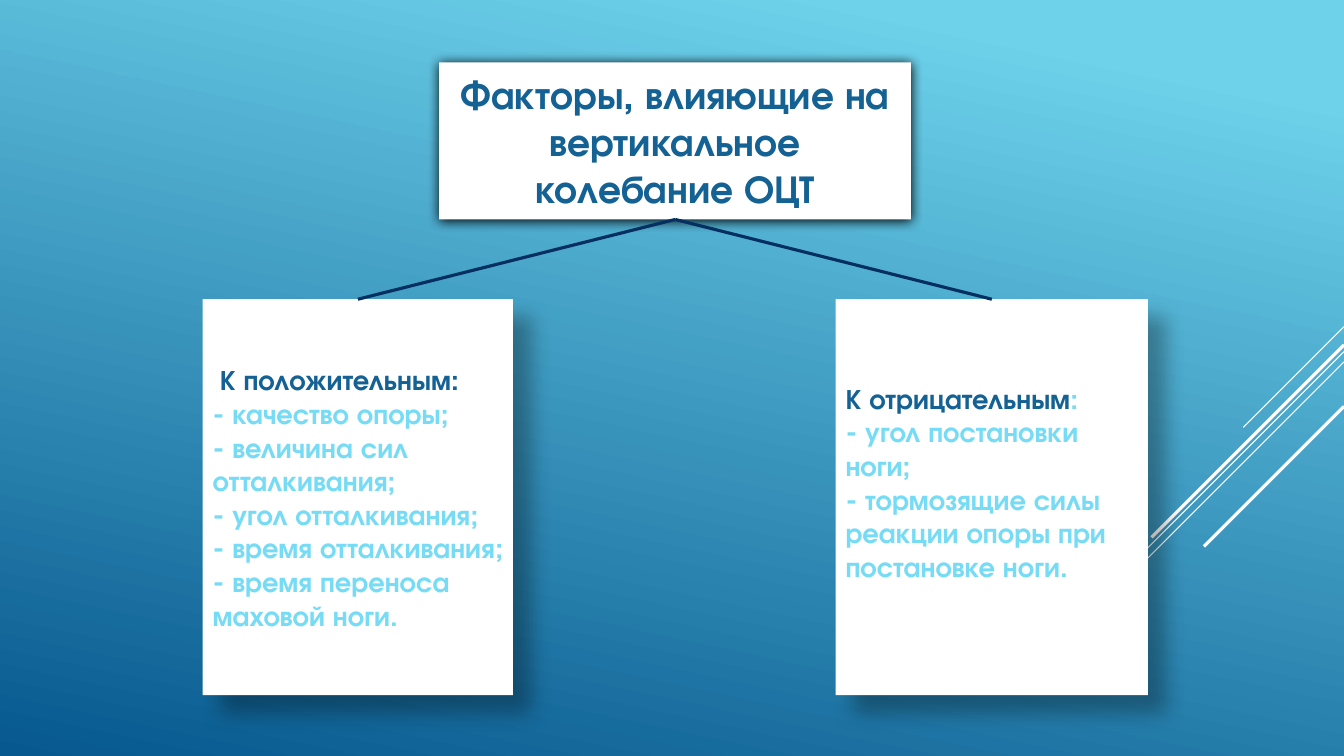
from lxml.etree import SubElement
from pptx import Presentation
from pptx.dml.color import RGBColor
from pptx.enum.shapes import MSO_CONNECTOR, MSO_SHAPE
from pptx.enum.text import MSO_ANCHOR, PP_ALIGN
from pptx.oxml.ns import qn
from pptx.util import Cm, Pt

FONT = "TeX Gyre Adventor"
WHITE, NAVY, BLUE, SKY = "FFFFFF", "052F61", "146194", "76DBF4"
SLIDE_WIDTH, SLIDE_HEIGHT = 33.87, 19.05
BOTTOM_SITE, TOP_SITE = 2, 0

TITLE = "Факторы, влияющие на вертикальное колебание ОЦТ"
POSITIVE = [
    "- качество опоры;",
    "- величина сил отталкивания;",
    "- угол отталкивания;",
    "- время отталкивания;",
    "- время переноса маховой ноги.",
]
NEGATIVE = [
    "- угол постановки ноги;",
    "- тормозящие силы реакции опоры при постановке ноги.",
]
# Distance from the top, horizontal run, line width
STRIPES = [
    (8.23, 2.54, 0.75),
    (8.86, 8.28, 0.75),
    (9.12, 5.26, 0.75),
    (8.69, 4.85, 2.25),
    (10.24, 3.53, 2.25),
]
TITLE_SHADOW = dict(opacity=100, blur=8.5, distance=1, angle=90)
CARD_SHADOW = dict(opacity=30, blur=15, distance=18, angle=45)


def rgb(value):
    return RGBColor.from_string(value)


def paint_background(slide):
    fill = slide.background.fill
    fill.gradient()
    fill.gradient_angle = 360 - 102
    stops = [(0.1, "6ED2EB"), (1, "06588E")]
    for stop, (position, color) in zip(fill.gradient_stops, stops):
        stop.position = position
        stop.color.rgb = rgb(color)


def add_line(slide, color, width, start=(0, 0), end=(0, 0)):
    line = slide.shapes.add_connector(
        MSO_CONNECTOR.STRAIGHT, *map(Cm, start), *map(Cm, end))
    line.line.color.rgb = rgb(color)
    line.line.width = Pt(width)
    SubElement(line._element.spPr, qn("a:effectLst"))
    return line


def add_shadow(shape, opacity, blur, distance, angle):
    shape.shadow.inherit = False
    effects = shape._element.spPr.find(qn("a:effectLst"))
    shadow = SubElement(
        effects, qn("a:outerShdw"), blurRad=str(Pt(blur)), dist=str(Pt(distance)),
        dir=str(angle * 60000), algn="tl", rotWithShape="0")
    color = SubElement(shadow, qn("a:srgbClr"), val="000000")
    SubElement(color, qn("a:alpha"), val=str(opacity * 1000))


def add_card(slide, left, top, width, height, shadow):
    card = slide.shapes.add_shape(
        MSO_SHAPE.RECTANGLE, Cm(left), Cm(top), Cm(width), Cm(height))
    card.fill.solid()
    card.fill.fore_color.rgb = rgb(WHITE)
    card.line.fill.background()
    add_shadow(card, **shadow)
    card.text_frame.word_wrap = True
    card.text_frame.vertical_anchor = MSO_ANCHOR.MIDDLE
    return card


def write(paragraph, text, size=20, color=SKY, align=PP_ALIGN.LEFT):
    paragraph.alignment = align
    run = paragraph.add_run()
    run.text = text
    run.font.name = FONT
    run.font.size = Pt(size)
    run.font.bold = True
    run.font.color.rgb = rgb(color)


def add_factors(slide, left, width, heading, colon_color, factors):
    card = add_card(slide, left, 7.54, width, 9.98, CARD_SHADOW)
    first = card.text_frame.paragraphs[0]
    write(first, heading, color=BLUE)
    write(first, ":", color=colon_color)
    for factor in factors:
        write(card.text_frame.add_paragraph(), factor)
    return card


def main():
    presentation = Presentation()
    presentation.slide_width = Cm(SLIDE_WIDTH)
    presentation.slide_height = Cm(SLIDE_HEIGHT)
    slide = presentation.slides.add_slide(presentation.slide_layouts[6])

    paint_background(slide)
    for top, run, width in STRIPES:
        add_line(slide, WHITE, width, (SLIDE_WIDTH, top), (SLIDE_WIDTH - run, top + run))

    title = add_card(slide, 11.07, 1.57, 11.89, 3.96, TITLE_SHADOW)
    write(title.text_frame.paragraphs[0], TITLE, 28, BLUE, PP_ALIGN.CENTER)

    positive = add_factors(slide, 5.11, 7.82, "К положительным", BLUE, POSITIVE)
    heading = positive.text_frame.paragraphs[0]
    heading._p.get_or_add_pPr().set("marL", str(Cm(0.18)))

    negative = add_factors(slide, 21.06, 7.87, "К отрицательным", SKY, NEGATIVE)
    negative.text_frame.margin_bottom = Cm(0.89)

    for card in (positive, negative):
        branch = add_line(slide, NAVY, 2.25)
        branch.begin_connect(title, BOTTOM_SITE)
        branch.end_connect(card, TOP_SITE)

    presentation.save("out.pptx")


if __name__ == "__main__":
    main()
